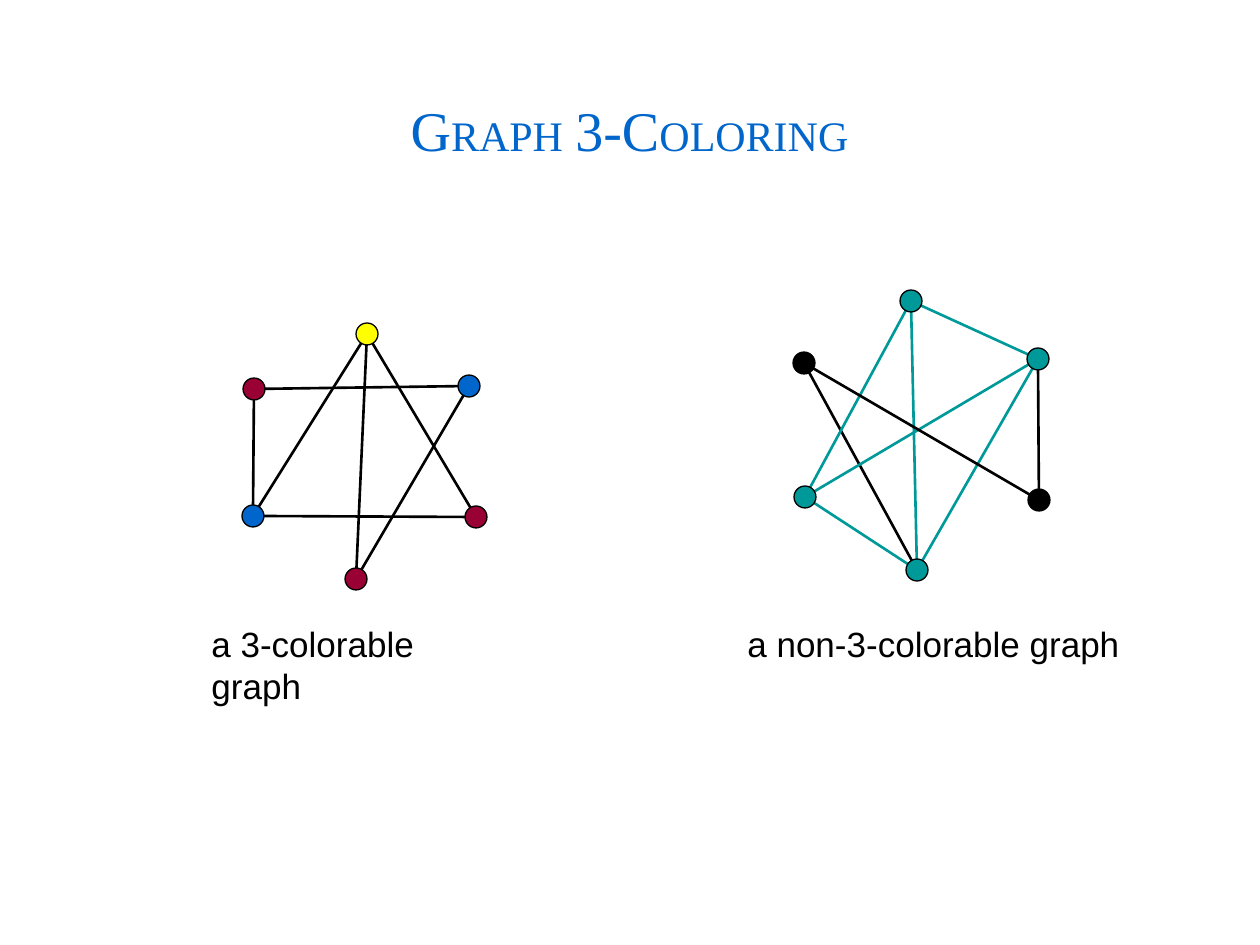
from dataclasses import dataclass
from math import hypot

from lxml.etree import SubElement
from pptx import Presentation
from pptx.dml.color import RGBColor
from pptx.enum.shapes import MSO_CONNECTOR, MSO_SHAPE
from pptx.enum.text import MSO_ANCHOR, MSO_AUTO_SIZE, PP_ALIGN
from pptx.oxml.ns import qn
from pptx.util import Emu, Pt


@dataclass(frozen=True)
class Theme:
    black: str = "000000"
    blue: str = "0066CC"
    red: str = "990033"
    yellow: str = "FFFF00"
    teal: str = "009999"
    title_font: str = "Times New Roman"
    caption_font: str = "Arial"
    capital: int = 32
    space: int = 28
    small_capital: int = 24
    caption: int = 20
    edge: float = 1.5
    outline: float = 0.75


THEME = Theme()
EMU_PER_PX = 914400 / 126
RADIUS = 11

TITLE = [
    ("G", THEME.capital),
    ("RAPH", THEME.small_capital),
    (" ", THEME.space),
    ("3-C", THEME.capital),
    ("OLORING", THEME.small_capital),
]

# Vertex: name -> (centre x, centre y, colour); edge: (start, end, colour)
COLORABLE = {
    "vertices": {
        "top": (367, 334, THEME.yellow),
        "upper left": (254, 389, THEME.red),
        "upper right": (469, 386, THEME.blue),
        "lower left": (253, 516, THEME.blue),
        "lower right": (476, 517, THEME.red),
        "bottom": (356, 579, THEME.red),
    },
    "edges": [
        ("top", "lower left", THEME.black),
        ("upper left", "upper right", THEME.black),
        ("bottom", "top", THEME.black),
        ("upper left", "lower left", THEME.black),
        ("lower left", "lower right", THEME.black),
        ("upper right", "bottom", THEME.black),
        ("top", "lower right", THEME.black),
    ],
    "trim": RADIUS,
}
NON_COLORABLE = {
    "vertices": {
        "upper left": (804, 363, THEME.black),
        "lower right": (1039, 500, THEME.black),
        "top": (911, 301, THEME.teal),
        "lower left": (805, 497, THEME.teal),
        "upper right": (1038, 359, THEME.teal),
        "bottom": (917, 570, THEME.teal),
    },
    "edges": [
        ("lower right", "upper right", THEME.black),
        ("upper left", "bottom", THEME.black),
        ("top", "bottom", THEME.teal),
        ("top", "lower left", THEME.teal),
        ("top", "upper right", THEME.teal),
        ("lower left", "upper right", THEME.teal),
        ("upper right", "bottom", THEME.teal),
        ("lower left", "bottom", THEME.teal),
        ("upper left", "lower right", THEME.black),
    ],
    "trim": 0,
}


def px(*lengths):
    return [Emu(round(length * EMU_PER_PX)) for length in lengths]


def apply(target, values):
    for name, value in values.items():
        setattr(target, name, value)


def add_run(paragraph, text, font, size, color):
    run = paragraph.add_run()
    run.text = text
    apply(run.font, {"name": font, "size": Pt(size)})
    run.font.color.rgb = RGBColor.from_string(color)


def format_line(line, color, width):
    line.color.rgb = RGBColor.from_string(color)
    line.width = Pt(width)


def fill_title(title):
    left, top, width, height = px(94, 50, 1071, 158)
    apply(title, {"left": left, "top": top, "width": width, "height": height})
    title.text_frame.vertical_anchor = MSO_ANCHOR.MIDDLE
    heading = title.text_frame.paragraphs[0]
    heading.alignment = PP_ALIGN.CENTER
    for text, size in TITLE:
        add_run(heading, text, THEME.title_font, size, THEME.blue)


def add_edge(slide, start, end, color, trim):
    """Join two vertex centres, leaving out trim px at each end."""
    (x1, y1, _), (x2, y2, _) = start, end
    share = trim / hypot(x2 - x1, y2 - y1)
    dx, dy = (x2 - x1) * share, (y2 - y1) * share
    edge = slide.shapes.add_connector(
        MSO_CONNECTOR.STRAIGHT, *px(x1 + dx, y1 + dy, x2 - dx, y2 - dy))
    format_line(edge.line, color, THEME.edge)
    SubElement(edge._element.spPr, qn("a:effectLst"))


def add_vertex(slide, x, y, color):
    vertex = slide.shapes.add_shape(
        MSO_SHAPE.OVAL, *px(x - RADIUS, y - RADIUS, 2 * RADIUS, 2 * RADIUS))
    vertex.shadow.inherit = False
    vertex.fill.solid()
    vertex.fill.fore_color.rgb = RGBColor.from_string(color)
    format_line(vertex.line, THEME.black, THEME.outline)


def add_graph(slide, vertices, edges, trim):
    for start, end, color in edges:
        add_edge(slide, vertices[start], vertices[end], color, trim)
    for vertex in vertices.values():
        add_vertex(slide, *vertex)


def add_caption(slide, text, left, width):
    caption = slide.shapes.add_textbox(*px(left, 616, width, 54))
    apply(caption.text_frame,
          {"word_wrap": True, "auto_size": MSO_AUTO_SIZE.SHAPE_TO_FIT_TEXT})
    add_run(caption.text_frame.paragraphs[0], text,
            THEME.caption_font, THEME.caption, THEME.black)


def main():
    deck = Presentation()
    deck.slide_width, deck.slide_height = px(1260, 945)
    slide = deck.slides.add_slide(deck.slide_layouts[5])
    fill_title(slide.shapes.title)
    add_graph(slide, **COLORABLE)
    add_caption(slide, "a 3-colorable graph", 199, 320)
    add_graph(slide, **NON_COLORABLE)
    add_caption(slide, "a non-3-colorable graph", 735, 413)
    deck.save("out.pptx")


if __name__ == "__main__":
    main()
